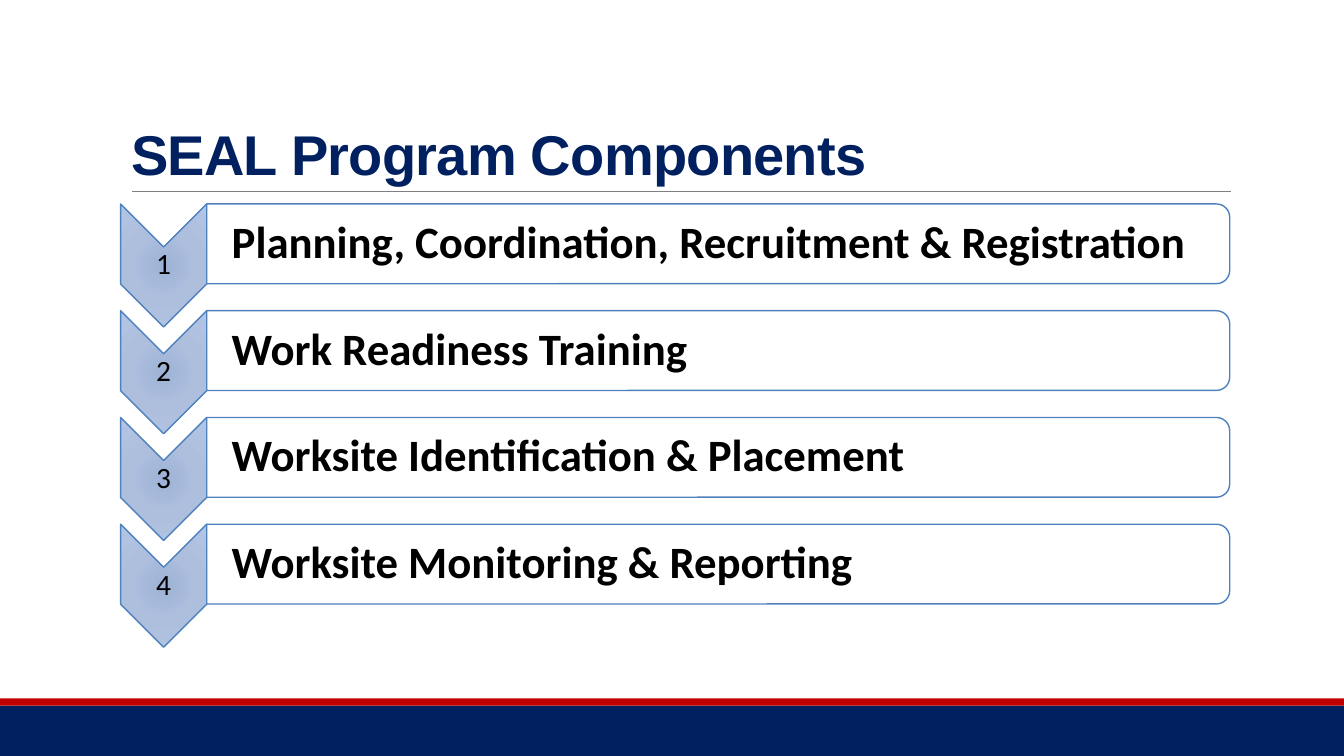
from pptx import Presentation
from pptx.dml.color import RGBColor
from pptx.enum.shapes import MSO_CONNECTOR, MSO_SHAPE as SHAPE
from pptx.enum.text import MSO_ANCHOR as ANCHOR, PP_ALIGN as ALIGN
from pptx.oxml import parse_xml
from pptx.oxml.ns import nsdecls, qn
from pptx.oxml.xmlchemy import OxmlElement
from pptx.util import Cm, Pt

TITLE = "SEAL Program Components"
COMPONENTS = [
    "Planning, Coordination, Recruitment & Registration",
    "Work Readiness Training",
    "Worksite Identification & Placement",
    "Worksite Monitoring & Reporting",
]

NAVY = RGBColor(0x00, 0x20, 0x60)
RED = RGBColor(0xC0, 0x00, 0x00)
GRAY = RGBColor(0x80, 0x80, 0x80)
BLUE = RGBColor(0x4F, 0x81, 0xBD)
WHITE = RGBColor(0xFF, 0xFF, 0xFF)
BLACK = RGBColor(0x00, 0x00, 0x00)
CHEVRON_STOPS = [
    (0, RGBColor(0x9D, 0xB2, 0xD6)),
    (45, RGBColor(0xAE, 0xBF, 0xDE)),
    (100, RGBColor(0xB3, 0xC5, 0xE5)),
]

SLIDE_W, SLIDE_H = 33.87, 19.05
BAND_H, STRIPE_H = 1.27, 0.18
TOP, PITCH = 5.14, 2.69
CHEVRON_X, CHEVRON_W, CHEVRON_H = 3.04, 2.17, 3.1
NUMBER_H = 0.94
BAR_X, BAR_W, BAR_H = CHEVRON_X + CHEVRON_W, 25.78, 2.01
LABEL_W, LABEL_H = 25.68, 1.83


def add_band(s, y, h, color):
    sp = s.shapes.add_shape(SHAPE.RECTANGLE, 0, Cm(y), Cm(SLIDE_W), Cm(h))
    sp.shadow.inherit = False
    sp.fill.solid()
    sp.fill.fore_color.rgb = color
    sp.line.fill.background()


def add_turned(s, kind, x, y, w, h):
    left, top = x + (w - h) / 2, y + (h - w) / 2
    sp = s.shapes.add_shape(kind, Cm(left), Cm(top), Cm(h), Cm(w))
    sp.rotation = 90
    sp.shadow.inherit = False
    sp.line.color.rgb = BLUE
    sp.line.width = Pt(1)
    return sp


def fill_radial(sp, stops):
    sp.fill.background()
    gs = "".join(
        f'<a:gs pos="{pos * 1000}"><a:srgbClr val="{color}"/></a:gs>'
        for pos, color in stops
    )
    grad = parse_xml(
        f'<a:gradFill {nsdecls("a")} rotWithShape="1"><a:gsLst>{gs}</a:gsLst>'
        '<a:path path="circle"><a:fillToRect l="100000" t="100000" '
        'r="100000" b="100000"/></a:path></a:gradFill>'
    )
    spPr = sp._element.spPr
    spPr.replace(spPr.find(qn("a:noFill")), grad)


def fill_translucent(sp, color, opacity):
    sp.fill.solid()
    sp.fill.fore_color.rgb = color
    alpha = OxmlElement("a:alpha")
    alpha.set("val", str(opacity * 1000))
    sp._element.spPr.find(qn("a:solidFill"))[0].append(alpha)


def write(tf, text, size, font, color, bold, align, spacing):
    tf.text = text
    tf.word_wrap = True
    p = tf.paragraphs[0]
    p.alignment = align
    p.line_spacing = spacing
    r = p.runs[0]
    r.font.size = Pt(size)
    r.font.name = font
    r.font.bold = bold
    r.font.color.rgb = color
    return r


def add_text(s, text, x, y, w, h, size, bold, align, inset, left_inset):
    tf = s.shapes.add_textbox(Cm(x), Cm(y), Cm(w), Cm(h)).text_frame
    tf.margin_left = Cm(left_inset)
    tf.margin_top = tf.margin_right = tf.margin_bottom = Cm(inset)
    tf.vertical_anchor = ANCHOR.MIDDLE
    write(tf, text, size, "Calibri", BLACK, bold, align, 0.9)


def add_component(s, number, label, y):
    chevron = add_turned(s, SHAPE.CHEVRON, CHEVRON_X, y, CHEVRON_W, CHEVRON_H)
    fill_radial(chevron, CHEVRON_STOPS)
    add_text(s, str(number), CHEVRON_X, y + (CHEVRON_H - NUMBER_H) / 2,
             CHEVRON_W, NUMBER_H, 21, False, ALIGN.CENTER, 0.03, 0.03)
    bar = add_turned(s, SHAPE.ROUND_2_SAME_RECTANGLE, BAR_X, y, BAR_W, BAR_H)
    fill_translucent(bar, WHITE, 90)
    add_text(s, label, BAR_X, y + (BAR_H - LABEL_H) / 2,
             LABEL_W, LABEL_H, 32, True, ALIGN.LEFT, 0.05, 0.63)


def main():
    prs = Presentation()
    prs.slide_width, prs.slide_height = Cm(SLIDE_W), Cm(SLIDE_H)
    s = prs.slides.add_slide(prs.slide_layouts[5])

    band_y = SLIDE_H - BAND_H
    add_band(s, band_y, BAND_H, NAVY)
    add_band(s, band_y - STRIPE_H, STRIPE_H, RED)

    rule = s.shapes.add_connector(
        MSO_CONNECTOR.STRAIGHT, Cm(3.33), Cm(4.83), Cm(31.01), Cm(4.83))
    rule.line.color.rgb = GRAY
    rule.line.width = Pt(0.5)
    rule._element.spPr.append(OxmlElement("a:effectLst"))

    title = s.shapes.title
    title.left, title.top = Cm(3.05), Cm(0.79)
    title.width, title.height = Cm(27.94), Cm(4.04)
    title.text_frame.vertical_anchor = ANCHOR.BOTTOM
    r = write(title.text_frame, TITLE, 40, "Arial", NAVY, True, ALIGN.LEFT, 0.85)
    r.font._element.set("spc", "-50")

    for i, label in enumerate(COMPONENTS):
        add_component(s, i + 1, label, TOP + i * PITCH)

    prs.save("out.pptx")


if __name__ == "__main__":
    main()
